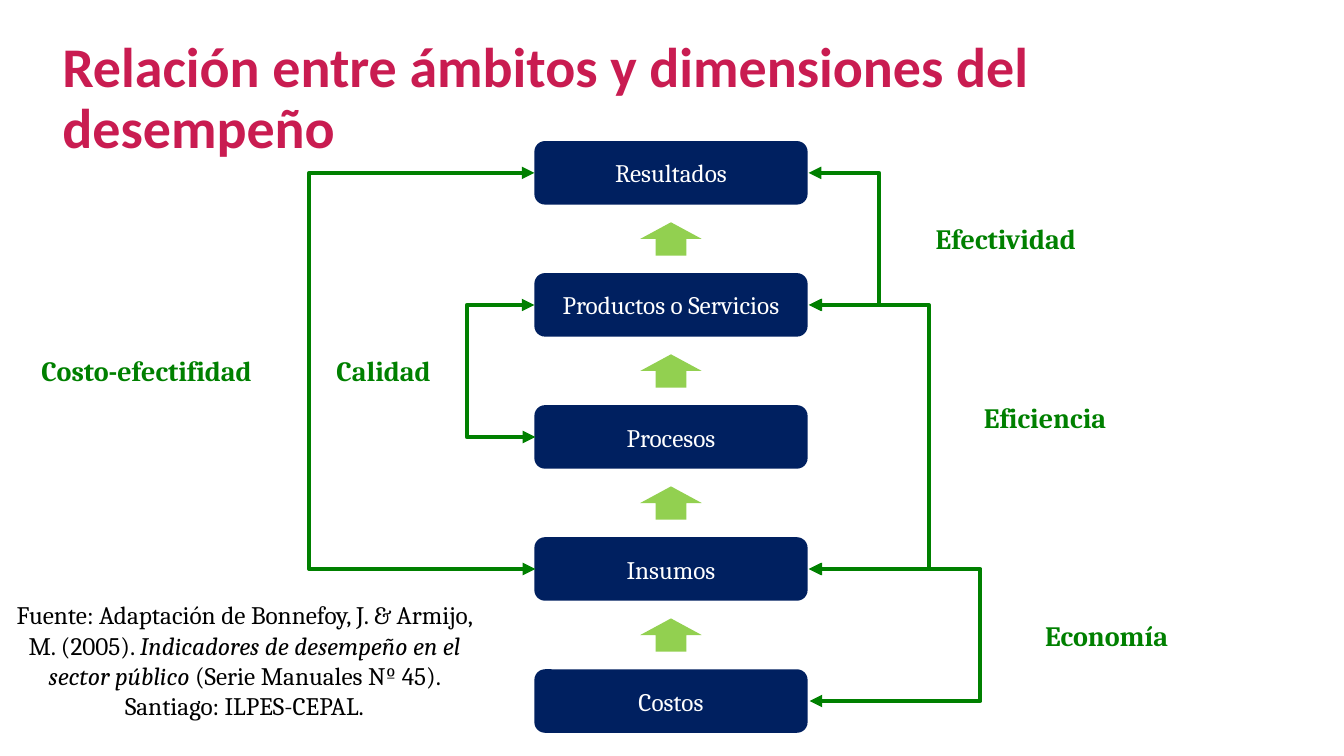
from lxml import etree
from pptx import Presentation
from pptx.dml.color import RGBColor
from pptx.enum.shapes import MSO_CONNECTOR, MSO_SHAPE
from pptx.enum.text import MSO_ANCHOR, MSO_AUTO_SIZE, PP_ALIGN
from pptx.oxml.ns import qn
from pptx.util import Inches, Pt

ELBOW = MSO_CONNECTOR.ELBOW
ROUNDED = MSO_SHAPE.ROUNDED_RECTANGLE
ARROW = MSO_SHAPE.RIGHT_ARROW
TOP, MIDDLE = MSO_ANCHOR.TOP, MSO_ANCHOR.MIDDLE
LEFT, CENTER = PP_ALIGN.LEFT, PP_ALIGN.CENTER
GROW = MSO_AUTO_SIZE.SHAPE_TO_FIT_TEXT

CRIMSON = RGBColor(0xC9, 0x1C, 0x51)
NAVY = RGBColor(0x00, 0x20, 0x60)
LIME = RGBColor(0x92, 0xD0, 0x50)
GREEN = RGBColor(0x00, 0x80, 0x00)
WHITE = RGBColor(0xFF, 0xFF, 0xFF)
BLACK = RGBColor(0x00, 0x00, 0x00)

TITLE = "Relación entre ámbitos y dimensiones del desempeño"
STAGES = ["Resultados", "Productos o Servicios", "Procesos", "Insumos", "Costos"]
BRACKETS = [
    ("left", 3.03, 0, 3),
    ("right", 8.73, 0, 1),
    ("right", 9.23, 1, 3),
    ("right", 9.75, 3, 4),
    ("left", 4.62, 1, 2),
]
DIMENSIONS = [
    ("Eficiencia", 9.07, 3.74),
    ("Costo-efectifidad", 0.16, 3.27),
    ("Economía", 9.68, 5.9),
    ("Efectividad", 8.68, 1.96),
    ("Calidad", 2.51, 3.27),
]
CITATION = [
    ("Fuente: Adaptación de Bonnefoy, J. & Armijo, M. (2005). ", False),
    ("Indicadores de desempeño en el sector público ", True),
    ("(Serie Manuales Nº 45). Santiago: ILPES-CEPAL.", False),
]

STAGE_LEFT, STAGE_TOP, STAGE_WIDTH, STAGE_HEIGHT = 5.3, 1.4, 2.71, 0.63
STAGE_STEP = 1.31
ARROW_LENGTH, ARROW_BREADTH = 0.33, 0.61
EDGES = {"left": 5.3, "right": 8.02}
CONNECTOR_WIDTH = 0.01


def write(frame, pieces, font, size, color, bold=False, align=CENTER, anchor=MIDDLE):
    frame.word_wrap = True
    frame.vertical_anchor = anchor
    para = frame.paragraphs[0]
    para.alignment = align
    for words, italic in pieces:
        span = para.add_run()
        span.text = words
        span.font.name = font
        span.font.size = Pt(size)
        span.font.bold = bold
        span.font.italic = italic
        span.font.color.rgb = color
    return para


def add_text(page, place, *style, **options):
    box = page.shapes.add_textbox(*map(Inches, place))
    return box, write(box.text_frame, *style, **options)


def add_filled(page, preset, place, color):
    shape = page.shapes.add_shape(preset, *map(Inches, place))
    shape.shadow.inherit = False
    shape.fill.solid()
    shape.fill.fore_color.rgb = color
    shape.line.fill.background()
    return shape


def add_bracket(page, side, spine, first, last):
    edge = EDGES[side]
    start, end = (STAGE_TOP + STAGE_HEIGHT / 2 + row * STAGE_STEP for row in (first, last))
    bracket = page.shapes.add_connector(
        ELBOW, Inches(edge), Inches(start), Inches(edge + CONNECTOR_WIDTH), Inches(end))
    bracket.line.color.rgb = GREEN
    bracket.line.width = Pt(3)
    properties = bracket.element.spPr
    bend = round((spine - edge) / CONNECTOR_WIDTH * 100000)
    guides = properties.find(qn("a:prstGeom")).get_or_add_avLst()
    etree.SubElement(guides, qn("a:gd"), name="adj1", fmla=f"val {bend}")
    outline = properties.find(qn("a:ln"))
    for tip in ("a:headEnd", "a:tailEnd"):
        etree.SubElement(outline, qn(tip), type="triangle")
    etree.SubElement(properties, qn("a:effectLst"))


def main():
    deck = Presentation()
    deck.slide_width, deck.slide_height = Inches(13.33), Inches(7.5)
    page = deck.slides.add_slide(deck.slide_layouts[6])

    heading = add_text(page, (0.52, 0.34, 12.28, 0.69), [(TITLE, False)], "Calibri", 40,
                       CRIMSON, bold=True, align=LEFT, anchor=TOP)[1]
    heading.line_spacing = 0.9

    arrow_left = STAGE_LEFT + (STAGE_WIDTH - ARROW_LENGTH) / 2
    gap = STAGE_STEP - STAGE_HEIGHT
    for row, name in enumerate(STAGES):
        top = STAGE_TOP + row * STAGE_STEP
        stage = add_filled(page, ROUNDED, (STAGE_LEFT, top, STAGE_WIDTH, STAGE_HEIGHT), NAVY)
        write(stage.text_frame, [(name, False)], "Cambria", 18, WHITE)
        if row:
            arrow_top = top - (gap + ARROW_BREADTH) / 2
            arrow = add_filled(
                page, ARROW, (arrow_left, arrow_top, ARROW_LENGTH, ARROW_BREADTH), LIME)
            arrow.rotation = 270

    for bracket in BRACKETS:
        add_bracket(page, *bracket)

    for name, left, top in DIMENSIONS:
        add_text(page, (left, top, 2.59, 0.8), [(name, False)], "Cambria", 20, GREEN, bold=True)

    source = add_text(page, (0.04, 5.9, 4.77, 1.31), CITATION, "Cambria", 18, BLACK,
                      anchor=TOP)[0]
    source.text_frame.auto_size = GROW

    deck.save("out.pptx")


if __name__ == "__main__":
    main()
